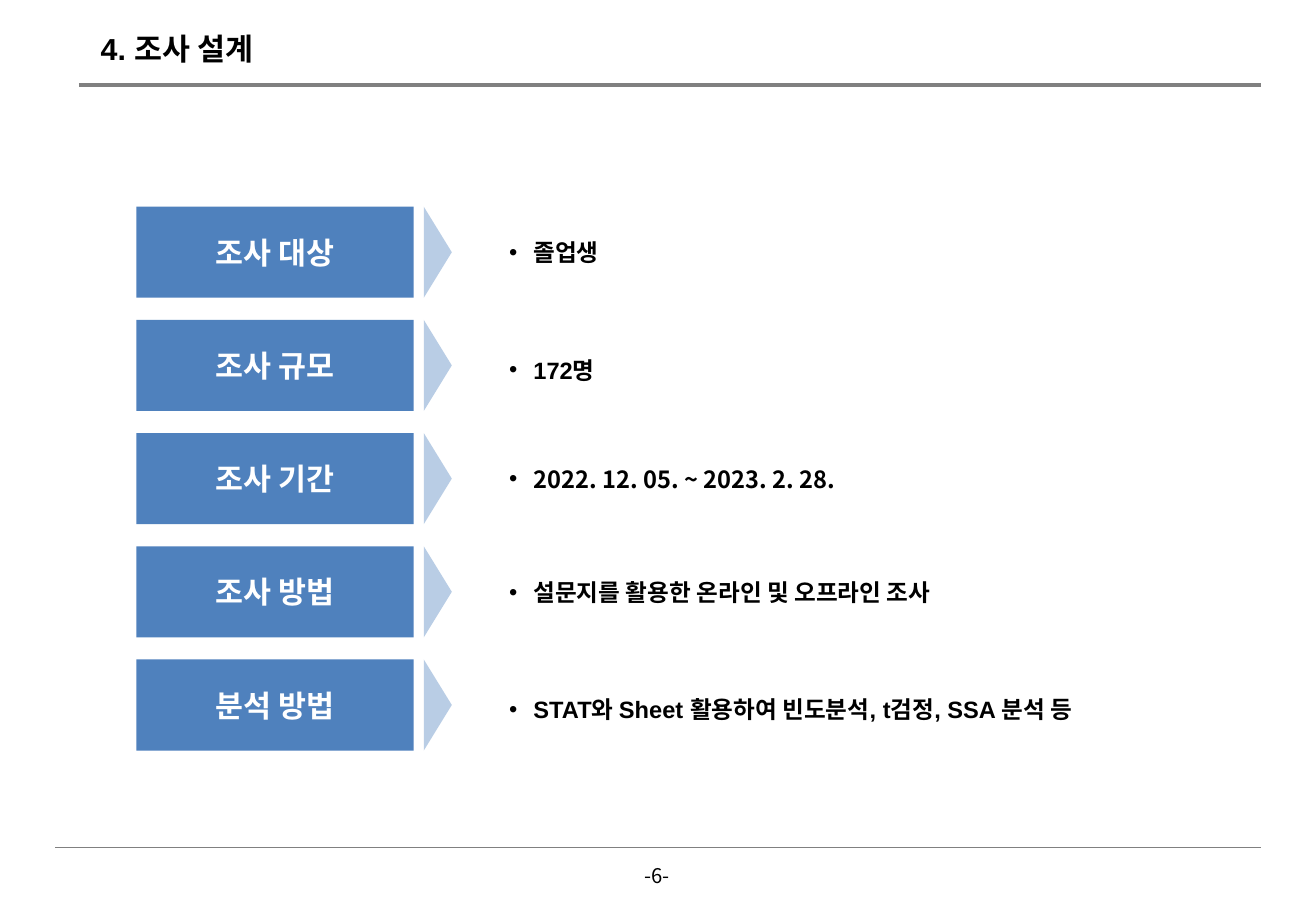
from lxml import etree
from pptx import Presentation
from pptx.dml import color
from pptx.enum import shapes, text
from pptx.oxml import ns
from pptx.util import Pt

NOTO = "Noto Sans CJK KR"
ARIAL = "Arial"
BLUE, PALE, GRAY = "4F81BD", "B9CDE5", "808080"
WHITE, BLACK = "FFFFFF", "000000"

# label, detail, latin font of the detail, line spacing
ROWS = [
    ("조사 대상", "졸업생", ARIAL, 1.0),
    ("조사 규모", "172명", ARIAL, 1.3),
    ("조사 기간", "2022. 12. 05. ~ 2023. 2. 28.", NOTO, 1.0),
    ("조사 방법", "설문지를 활용한 온라인 및 오프라인 조사", NOTO, 1.0),
    ("분석 방법", "STAT와 Sheet 활용하여 빈도분석, t검정, SSA 분석 등", ARIAL, 1.3),
]


def rgb(code):
    return color.RGBColor.from_string(code)


def add_node(parent, tag, **attrs):
    return etree.SubElement(parent, ns.qn(tag), **attrs)


def add_run(para, words, size, tint, font=NOTO, bold=True):
    run = para.add_run()
    run.text = words
    run.font.size, run.font.bold = Pt(size), bold
    run.font.color.rgb = rgb(tint)
    run.font.name = font
    add_node(run.font._element, "a:ea", typeface=NOTO)


def add_rule(slide, left, right, y, width):
    line = slide.shapes.add_connector(
        shapes.MSO_CONNECTOR.STRAIGHT, Pt(left), Pt(y), Pt(right), Pt(y))
    line.line.color.rgb = rgb(GRAY)
    line.line.width = Pt(width)
    add_node(line._element.spPr, "a:effectLst")


def add_block(slide, kind, box, fill):
    """Add a borderless shape and return it."""
    block = slide.shapes.add_shape(kind, *map(Pt, box))
    block.shadow.inherit = False
    block.fill.solid()
    block.fill.fore_color.rgb = rgb(fill)
    block.line.fill.background()
    return block


def add_panel(slide, box, fill, align):
    """Add a rectangle for text and return its first paragraph."""
    frame = add_block(slide, shapes.MSO_SHAPE.RECTANGLE, box, fill).text_frame
    frame.word_wrap = True
    frame.vertical_anchor = text.MSO_ANCHOR.MIDDLE
    frame.margin_left = frame.margin_right = Pt(2.9)
    frame.margin_top = frame.margin_bottom = Pt(2.9)
    para = frame.paragraphs[0]
    para.alignment = align
    return para


def add_label(slide, box, align):
    """Add a text box that fits its text and return its first paragraph."""
    frame = slide.shapes.add_textbox(*map(Pt, box)).text_frame
    frame.word_wrap = False
    frame.auto_size = text.MSO_AUTO_SIZE.SHAPE_TO_FIT_TEXT
    para = frame.paragraphs[0]
    para.alignment = align
    return para


def add_bullet(para):
    props = para._p.get_or_add_pPr()
    props.set("marL", str(Pt(28.1)))
    props.set("indent", str(Pt(-14.4)))
    add_node(props, "a:buFont", typeface=ARIAL)
    add_node(props, "a:buChar", char="•")


def add_header(slide, left, top, width):
    add_rule(slide, left, left + width, top + 36, 2)
    para = add_label(slide, (left + 5.8, top, 117.4, 28.8), text.PP_ALIGN.LEFT)
    add_run(para, "4. 조사 설계", 18, BLACK, ARIAL)


def add_footer(slide, left, top, width):
    add_rule(slide, left, left + width, top, 0.5)
    para = add_label(slide, (370.8, top + 5.7, 37.4, 21.6), text.PP_ALIGN.CENTER)
    add_run(para, "-6-", 12, BLACK, bold=False)


def add_row(slide, left, top, width, height, row):
    """Add a label, an arrow and a bulleted detail side by side."""
    label, detail, font, space = row
    para = add_panel(slide, (left, top, 164.4, height), BLUE, text.PP_ALIGN.CENTER)
    add_run(para, label, 18, WHITE)

    thick = 16.6
    mid_x, mid_y = left + 178.7, top + height / 2
    arrow = add_block(
        slide, shapes.MSO_SHAPE.ISOSCELES_TRIANGLE,
        (mid_x - height / 2, mid_y - thick / 2, height, thick), PALE)
    arrow.rotation = 90

    shift = 204.4
    para = add_panel(slide, (left + shift, top, width - shift, height),
                     WHITE, text.PP_ALIGN.LEFT)
    add_bullet(para)
    para.line_spacing = space
    add_run(para, detail, 14, BLACK, font)


def add_rows(slide, left, top, width, height, pitch):
    for i, row in enumerate(ROWS):
        add_row(slide, left, top + i * pitch, width, height, row)


def main():
    deck = Presentation()
    deck.slide_width, deck.slide_height = Pt(780), Pt(540)
    slide = deck.slides.add_slide(deck.slide_layouts[6])
    add_header(slide, 46.8, 14.4, 700.6)
    add_footer(slide, 32.8, 502.6, 714.6)
    add_rows(slide, 80.8, 122.5, 621.3, 54, 67.1)
    deck.save("out.pptx")


if __name__ == "__main__":
    main()
